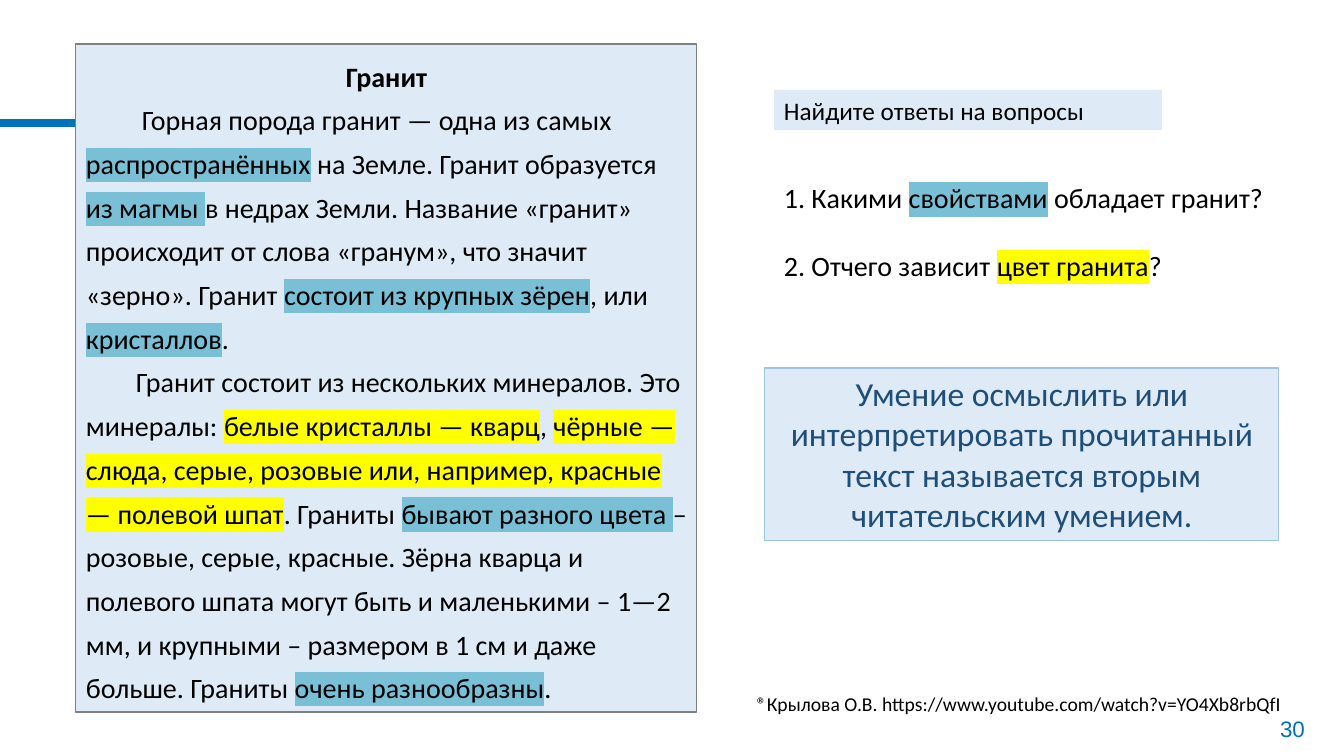
from lxml import etree
from pptx import Presentation
from pptx.dml.color import RGBColor
from pptx.enum.shapes import MSO_CONNECTOR, MSO_SHAPE
from pptx.enum.text import MSO_ANCHOR, PP_ALIGN
from pptx.oxml.ns import qn
from pptx.util import Pt

PX = 914400 / 100.8
BLUE, YELLOW = "79BFD5", "FFFF00"
PANEL, ACCENT = "DEEBF7", "0072BC"


def px(*lengths):
    return [round(length * PX) for length in lengths]


def write(frame, paragraphs, size, color="000000", font="Calibri", align=PP_ALIGN.LEFT):
    """Each paragraph is a list of (text, highlight colour or None)."""
    frame.word_wrap = True
    frame.vertical_anchor = MSO_ANCHOR.TOP
    for i, pieces in enumerate(paragraphs):
        paragraph = frame.add_paragraph() if i else frame.paragraphs[0]
        paragraph.alignment = align
        for text, mark in pieces:
            run = paragraph.add_run()
            run.text = text
            run.font.size = Pt(size)
            run.font.name = font
            run.font.color.rgb = RGBColor.from_string(color)
            if mark:
                highlight = etree.Element(qn("a:highlight"))
                etree.SubElement(highlight, qn("a:srgbClr"), val=mark)
                run.font._element.find(qn("a:solidFill")).addnext(highlight)


prs = Presentation()
prs.slide_width, prs.slide_height = px(1344, 756)
slide = prs.slides.add_slide(prs.slide_layouts[6])
shapes = slide.shapes

# Accent line running in from the left edge
accent_line = shapes.add_connector(MSO_CONNECTOR.STRAIGHT, *px(0, 123, 205, 123))
accent_line.line.color.rgb = RGBColor.from_string(ACCENT)
accent_line.line.width = Pt(6)
etree.SubElement(accent_line._element.spPr, qn("a:effectLst"))

# Tinted panels: reading text, key idea, task
panels = []
for box, border in [
    ((76, 44, 621, 668), "808080"),
    ((765, 368, 514, 173), "9DC3E6"),
    ((774, 90, 388, 40), None),
]:
    panel = shapes.add_shape(MSO_SHAPE.RECTANGLE, *px(*box))
    panel.shadow.inherit = False
    panel.fill.solid()
    panel.fill.fore_color.rgb = RGBColor.from_string(PANEL)
    if border:
        panel.line.color.rgb = RGBColor.from_string(border)
        panel.line.width = Pt(0.75)
    else:
        panel.line.fill.background()
    panels.append(panel.text_frame)
reading, key_idea, task = panels

# Reading text about granite
write(reading, [
    [("Гранит", None)],
    [
        ("Горная порода гранит — одна из самых ", None),
        ("распространённых", BLUE),
        (" на Земле. Гранит образуется ", None),
        ("из магмы ", BLUE),
        ("в недрах Земли. Название «гранит» происходит от слова «гранум», "
         "что значит «зерно». Гранит ", None),
        ("состоит из крупных зёрен", BLUE),
        (", или ", None),
        ("кристаллов", BLUE),
        (".", None),
    ],
    [
        ("Гранит состоит из нескольких минералов. Это минералы: ", None),
        ("белые кристаллы — кварц", YELLOW),
        (", ", None),
        ("чёрные — слюда, серые, розовые или, например, красные — полевой шпат", YELLOW),
        (". Граниты ", None),
        ("бывают разного цвета ", BLUE),
        ("– розовые, серые, красные. Зёрна кварца и полевого шпата могут быть "
         "и маленькими – 1—2 мм, и крупными – размером в 1 см и даже больше. "
         "Граниты ", None),
        ("очень разнообразны", BLUE),
        (".", None),
    ],
], 20)
for paragraph, indent in zip(reading.paragraphs, px(0, 56, 50)):
    paragraph.line_spacing = 1.3
    paragraph._p.get_or_add_pPr().set("indent", str(indent))
heading = reading.paragraphs[0]
heading.alignment = PP_ALIGN.CENTER
heading.runs[0].font.bold = True

# Key idea and task
write(key_idea, [[("Умение осмыслить или интерпретировать прочитанный текст "
                   "называется вторым читательским умением.", None)]],
      24, "1F4E79", align=PP_ALIGN.CENTER)
write(task, [[("Найдите ответы на вопросы", None)]], 18)

# Questions
questions = shapes.add_textbox(*px(774, 176, 514, 146)).text_frame
write(questions, [
    [("1. Какими ", None), ("свойствами", BLUE), (" обладает гранит?", None)],
    [("2. Отчего зависит ", None), ("цвет гранита", YELLOW), ("?", None)],
], 20)
questions.paragraphs[1].space_before = Pt(24)

# Source credit and page number
credit = shapes.add_textbox(*px(747, 687, 567, 34)).text_frame
write(credit, [[("®Крылова О.В. https://www.youtube.com/watch?v=YO4Xb8rbQfI", None)]], 14)
page_number = shapes.add_textbox(*px(1252, 708, 81, 41)).text_frame
write(page_number, [[("30", None)]], 16, ACCENT, "Arial", PP_ALIGN.CENTER)
page_number.vertical_anchor = MSO_ANCHOR.MIDDLE

prs.save("out.pptx")
